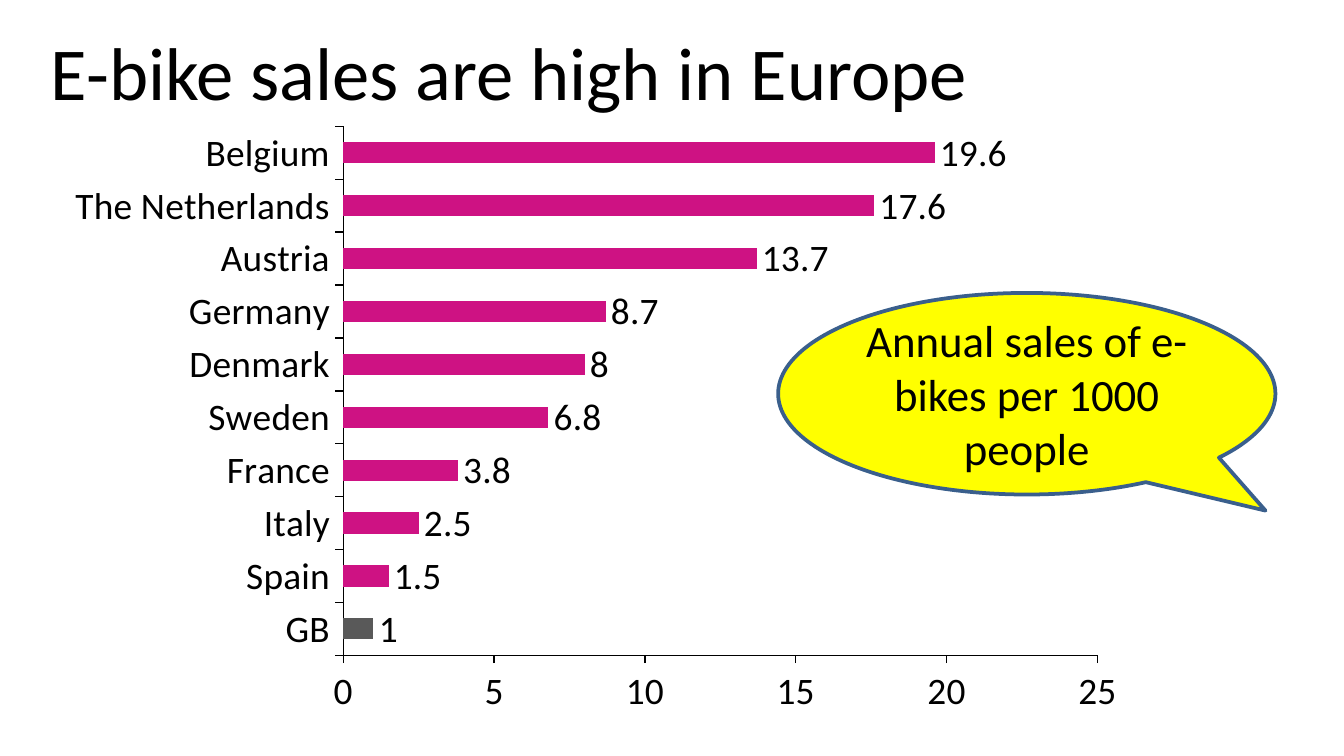
import pptx
import pptx.chart.data
import pptx.dml.color
import pptx.enum.chart
import pptx.enum.shapes
import pptx.enum.text
import pptx.util

Inches, Pt = pptx.util.Inches, pptx.util.Pt
RGB = pptx.dml.color.RGBColor.from_string
XL = pptx.enum.chart
ALIGN = pptx.enum.text.PP_ALIGN

# Content
TITLE = "E-bike sales are high in Europe"
CALLOUT = "Annual sales of e-bikes per 1000 people"
SALES = [  # bottom to top
    ("GB", 1),
    ("Spain", 1.5),
    ("Italy", 2.5),
    ("France", 3.8),
    ("Sweden", 6.8),
    ("Denmark", 8),
    ("Germany", 8.7),
    ("Austria", 13.7),
    ("The Netherlands", 17.6),
    ("Belgium", 19.6),
]
HIGHLIGHT = "GB"

THEME = {
    "font": "Calibri", "text": "000000", "bar": "CE1283", "highlight": "595959",
    "callout": "FFFF00", "outline": "3A5F8C",
    "title_size": 40, "chart_size": 20, "callout_size": 24,
}


def style_font(font, size):
    font.name = THEME["font"]
    font.size = Pt(size)
    font.bold = False
    font.color.rgb = RGB(THEME["text"])


def add_text(tf, text, size, align):
    tf.word_wrap = True
    p = tf.paragraphs[0]
    p.alignment = align
    r = p.add_run()
    r.text = text
    style_font(r.font, size)


def fill(fmt, color):
    fmt.fill.solid()
    fmt.fill.fore_color.rgb = RGB(color)


def box(*lengths):
    return [Inches(v) for v in lengths]


# Slide, 16:9
prs = pptx.Presentation()
prs.slide_width = Inches(10)
prs.slide_height = Inches(10 * 9 / 16)
slide = prs.slides.add_slide(prs.slide_layouts[6])

# Title
sp = slide.shapes.add_textbox(*box(0.28, 0.14, 9.3, 0.77))
add_text(sp.text_frame, TITLE, THEME["title_size"], ALIGN.LEFT)

# Bar chart
countries, values = zip(*SALES)
data = pptx.chart.data.CategoryChartData()
data.categories = countries
data.add_series("Series 1", values)
chart = slide.shapes.add_chart(
    XL.XL_CHART_TYPE.BAR_CLUSTERED, *box(0.4, 0.85, 8.07, 4.56), data).chart
chart.has_legend = False
chart.has_title = False
style_font(chart.font, THEME["chart_size"])

for axis in (chart.category_axis, chart.value_axis):
    axis.has_major_gridlines = False
    axis.major_tick_mark = XL.XL_TICK_MARK.OUTSIDE
    axis.minor_tick_mark = XL.XL_TICK_MARK.NONE
    axis.format.line.color.rgb = RGB(THEME["text"])
    axis.format.line.width = Pt(0.75)
    style_font(axis.tick_labels.font, THEME["chart_size"])

plot = chart.plots[0]
plot.gap_width = 150
plot.vary_by_categories = False
series = plot.series[0]
series.invert_if_negative = False
fill(series.format, THEME["bar"])
fill(series.points[countries.index(HIGHLIGHT)].format, THEME["highlight"])
labels = series.data_labels
labels.show_value = True
labels.position = XL.XL_LABEL_POSITION.OUTSIDE_END
style_font(labels.font, THEME["chart_size"])

# Callout
sp = slide.shapes.add_shape(
    pptx.enum.shapes.MSO_SHAPE.OVAL_CALLOUT, *box(5.79, 2.18, 3.7, 1.5))
sp.adjustments[0], sp.adjustments[1] = 0.48, 0.58
sp.shadow.inherit = False
fill(sp, THEME["callout"])
sp.line.color.rgb = RGB(THEME["outline"])
sp.line.width = Pt(2)
sp.text_frame.vertical_anchor = pptx.enum.text.MSO_ANCHOR.MIDDLE
add_text(sp.text_frame, CALLOUT, THEME["callout_size"], ALIGN.CENTER)

prs.save("out.pptx")
